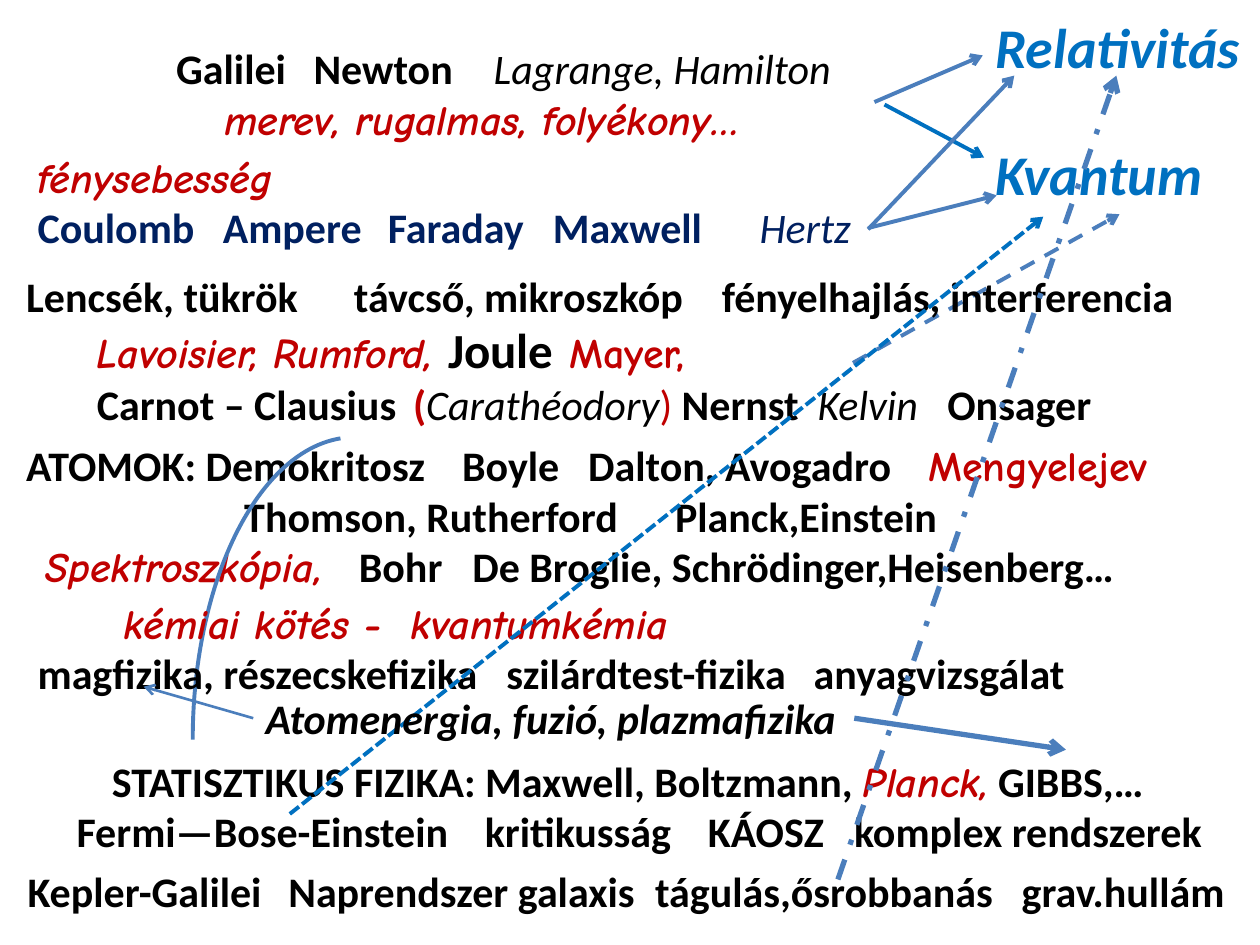
from functools import partial

from lxml.etree import SubElement
from pptx import Presentation
from pptx.dml.color import RGBColor
from pptx.enum.dml import MSO_LINE
from pptx.enum.shapes import MSO_CONNECTOR, MSO_SHAPE
from pptx.oxml.ns import qn
from pptx.util import Inches, Pt

BLACK = RGBColor(0, 0, 0)
RED = RGBColor(0xC0, 0, 0)
NAVY = RGBColor(0, 0x20, 0x60)
BLUE = RGBColor(0, 0x70, 0xC0)
STEEL = RGBColor(0x4B, 0x7E, 0xBC)


def run(text, color=BLACK, font="Calibri", size=24, bold=True, italic=False):
    return text, color, font, size, bold, italic


hand = partial(run, color=RED, font="Comic Neue", italic=True)
slim = partial(run, bold=False, italic=True)
title = partial(run, color=BLUE, size=32, italic=True)


class Board:
    """Draws names and arrows on one slide in a shared style."""

    def __init__(self, slide):
        self.shapes = slide.shapes

    def text(self, left, top, width, height, *paras, gap=0):
        box = self.shapes.add_textbox(*map(Inches, (left, top, width, height)))
        frame = box.text_frame
        frame.word_wrap = True
        frame.margin_right = 0
        for num, (tabs, *runs) in enumerate(paras):
            para = frame.add_paragraph() if num else frame.paragraphs[0]
            if num and gap:
                para.space_before = Pt(gap)
            if tabs:
                stops = SubElement(para._p.get_or_add_pPr(), qn("a:tabLst"))
                for pos in tabs:
                    SubElement(stops, qn("a:tab"), pos=str(Inches(pos)), algn="l")
            for words, color, name, size, bold, italic in runs:
                part = para.add_run()
                part.text = words
                font = part.font
                font.name, font.size = name, Pt(size)
                font.bold, font.italic = bold, italic
                font.color.rgb = color
        return box

    def arrow(self, start, end, color=STEEL, width=2.25, dash=None):
        link = self.shapes.add_connector(
            MSO_CONNECTOR.STRAIGHT, *map(Inches, (*start, *end)))
        link.line.color.rgb = color
        link.line.width = Pt(width)
        if dash:
            link.line.dash_style = dash
        SubElement(link.line._get_or_add_ln(), qn("a:tailEnd"), type="arrow")
        SubElement(link._element.spPr, qn("a:effectLst"))
        return link

    def arc(self, left, top, width, height, start, end):
        arc = self.shapes.add_shape(
            MSO_SHAPE.ARC, *map(Inches, (left, top, width, height)))
        arc.adjustments[0], arc.adjustments[1] = start * 0.6, end * 0.6
        arc.shadow.inherit = False
        arc.fill.background()
        arc.line.color.rgb = STEEL
        arc.line.width = Pt(2.25)


def main():
    deck = Presentation()
    deck.slide_width, deck.slide_height = Inches(10), Inches(7.5)
    board = Board(deck.slides.add_slide(deck.slide_layouts[6]))

    board.text(
        1.3, 0.29, 5.51, 0.91,
        ((1.09, 2.52), run("Galilei\tNewton\t"), slim("Lagrange, Hamilton")),
        ((0.38,), hand("\tmerev, rugalmas, folyékony…")))
    modern = board.text(
        7.8, 0.05, 2.17, 1.65,
        ((), title("Relativitás")), ((), title("Kvantum")), gap=34)
    board.arrow((6.94, 0.81), (7.8, 0.44))
    board.arrow((7.02, 0.83), (7.81, 1.25), BLUE)

    board.text(
        0.2, 1.15, 6.95, 0.91,
        ((), hand("fénysebesség")),
        ((1.47, 2.78, 4.09, 5.73),
         run("Coulomb\tAmpere\tFaraday\tMaxwell\t", color=NAVY),
         slim("Hertz", color=NAVY)))
    board.arrow((6.89, 1.82), (8.05, 0.6))
    board.arrow((6.89, 1.81), (7.91, 1.55))

    board.text(
        0.67, 2.49, 8.19, 0.98,
        ((3.75,), hand("Lavoisier, Rumford, "), run("Joule", size=28),
         hand("\tMayer,", italic=False)),
        ((2.51, 5.72, 6.75), run("Carnot – Clausius\t"), run("(", color=RED),
         slim("Carathéodory"), run(") ", color=RED, bold=False),
         run("Nernst\t"), slim("Kelvin\t"), run("Onsager")))
    light = board.arrow((6.77, 2.88), (8.89, 1.7), dash=MSO_LINE.DASH)
    light.end_connect(modern, 2)

    board.text(
        0.11, 3.44, 9.42, 1.31,
        ((3.46, 4.46, 7.16), run("ATOMOK: Demokritosz\tBoyle\tDalton, Avogadro\t"),
         hand("Mengyelejev", italic=False)),
        ((1.73, 5.15), run("\tThomson, Rutherford\tPlanck,Einstein")),
        ((0.15, 2.64, 3.54), hand("\tSpektroszkópia,"),
         run("\tBohr\tDe Broglie, Schrödinger,Heisenberg…")))
    board.text(
        0.41, 5.95, 9.12, 0.5,
        ((0.38,), run("\tSTATISZTIKUS FIZIKA: Maxwell, Boltzmann, "),
         hand("Planck,"), run(" GIBBS,…")))
    board.arc(1.53, 3.47, 2.57, 4.8, 180, 267.3)
    board.text(
        0.51, 6.34, 9.23, 0.5,
        ((3.24, 5.01, 6.17),
         run("Fermi—Bose-Einstein\tkritikusság\tKÁOSZ\tkomplex rendszerek")))
    board.text(
        0.2, 4.69, 8.45, 0.91,
        ((0.68, 2.96), hand("\tkémiai kötés -\tkvantumkémia")),
        ((3.72, 6.16),
         run("magfizika, részecskefizika\tszilárdtest-fizika\tanyagvizsgálat")))
    board.text(
        0.11, 2.1, 9.62, 0.5,
        ((2.6, 5.52),
         run("Lencsék, tükrök\ttávcső, mikroszkóp\tfényelhajlás, interferencia")))
    board.text(
        0.12, 6.82, 9.88, 0.5,
        ((2.07, 4.98, 7.89),
         run("Kepler-Galilei\tNaprendszer galaxis\ttágulás,ősrobbanás\tgrav.hullám")))
    board.arrow((6.65, 6.98), (8.86, 0.6), width=3, dash=MSO_LINE.DASH_DOT)
    board.arrow((2.3, 6.46), (8.28, 1.72), BLUE, dash=MSO_LINE.SQUARE_DOT)

    atom = board.text(
        2.01, 5.45, 4.77, 0.5,
        ((), run("Atomenergia, fuzió, plazmafizika", italic=True)))
    board.arrow((2.01, 5.7), (1.14, 5.45), width=1.5).begin_connect(atom, 1)
    board.arrow((6.78, 5.7), (8.46, 5.95), width=3).begin_connect(atom, 3)
    deck.save("out.pptx")


if __name__ == "__main__":
    main()
